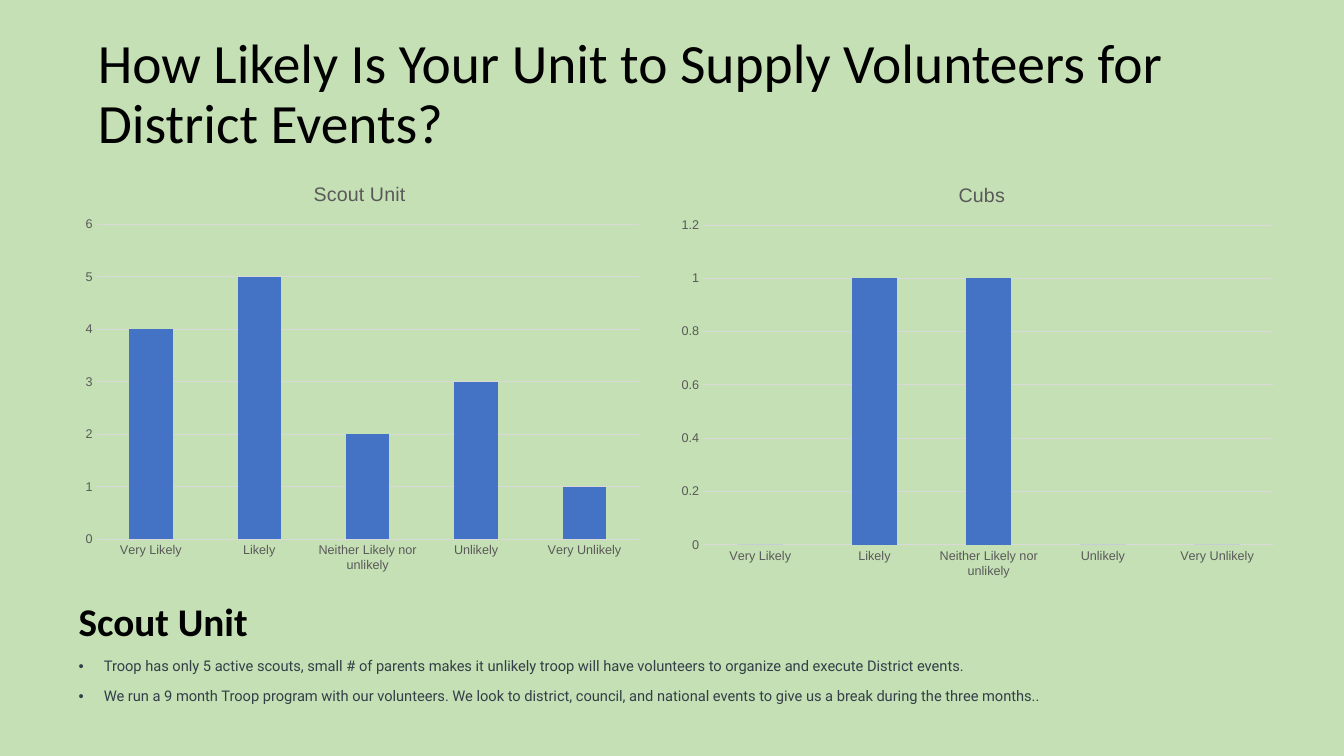
from lxml.etree import SubElement
from pptx import Presentation
from pptx.chart.data import CategoryChartData
from pptx.dml.color import RGBColor
from pptx.enum.chart import XL_CHART_TYPE, XL_TICK_MARK
from pptx.enum.text import MSO_ANCHOR, MSO_AUTO_SIZE, PP_ALIGN
from pptx.oxml.ns import qn
from pptx.util import Inches, Pt

COLORS = {"background": "C5E0B4", "text": "000000", "comment": "333E48",
          "bar": "4472C4", "label": "595959", "grid": "D9D9D9"}
ANSWERS = ["Very Likely", "Likely", "Neither Likely nor unlikely",
           "Unlikely", "Very Unlikely"]
COMMENTS = [
    "Troop has only 5 active scouts, small # of parents makes it unlikely "
    "troop will have volunteers to organize and execute District events.",
    "We run a 9 month Troop program with our volunteers. We look to district, "
    "council, and national events to give us a break during the three months..",
]


def rgb(name):
    """Return the palette colour with this name."""
    return RGBColor.from_string(COLORS[name])


def set_font(font, name, size, color, bold=False):
    """Format a font."""
    font.name, font.size, font.bold = name, Pt(size), bold
    font.color.rgb = rgb(color)


def place(sp, box, anchor):
    """Move a placeholder to a box and return its text frame."""
    sp.left, sp.top, sp.width, sp.height = (Inches(v) for v in box)
    tf = sp.text_frame
    tf.word_wrap = True
    tf.auto_size = MSO_AUTO_SIZE.NONE
    tf.vertical_anchor = anchor
    tf.margin_left = tf.margin_right = Inches(0.05)
    tf.margin_top = tf.margin_bottom = Inches(0.05)
    return tf


def set_bullet(p, char=None):
    """Give a paragraph a hanging bullet, or none."""
    pPr = p._p.get_or_add_pPr()
    indent = Inches(0.25) if char else 0
    pPr.set("marL", str(indent))
    pPr.set("indent", str(-indent))
    if char:
        SubElement(pPr, qn("a:buFont"), typeface="Arial")
        SubElement(pPr, qn("a:buChar"), char=char)
    else:
        SubElement(pPr, qn("a:buNone"))


def add_title(sp, box, text):
    """Fill the title placeholder."""
    tf = place(sp, box, MSO_ANCHOR.MIDDLE)
    tf.text = text
    p = tf.paragraphs[0]
    p.alignment = PP_ALIGN.LEFT
    p.line_spacing = 0.9
    set_font(p.runs[0].font, "Calibri", 39.6, "text")


def add_comments(sp, box, heading, comments):
    """Fill the body placeholder with a heading and bulleted comments."""
    tf = place(sp, box, MSO_ANCHOR.TOP)
    tf.text = "\n".join([heading] + comments)
    for i, p in enumerate(tf.paragraphs):
        set_bullet(p, "•" if i else None)
        p.alignment = PP_ALIGN.LEFT
        p.line_spacing = 0.9
        p.space_before = Pt(10 if i else 0)
        p.space_after = Pt(0)
        if i:
            set_font(p.runs[0].font, "Roboto", 10.5, "comment")
        else:
            set_font(p.runs[0].font, "Calibri", 28, "text", True)


def set_layout(parent, index, **values):
    """Position a chart part by fractions of the chart."""
    for old in parent.findall(qn("c:layout")):
        parent.remove(old)
    layout = SubElement(parent, qn("c:layout"))
    parent.insert(index, layout)
    manual = SubElement(layout, qn("c:manualLayout"))
    if "w" in values:
        SubElement(manual, qn("c:layoutTarget"), val="inner")
    for mode in ("xMode", "yMode"):
        SubElement(manual, qn("c:" + mode), val="edge")
    for key, value in values.items():
        SubElement(manual, qn("c:" + key), val=str(value))


def add_answer_chart(slide, box, title, values, top, step, title_x, plot_x, plot_w):
    """Add a column chart of the answers from one group."""
    data = CategoryChartData()
    data.categories = ANSWERS
    data.add_series("Series 1", values)
    chart = slide.shapes.add_chart(XL_CHART_TYPE.COLUMN_CLUSTERED,
                                   *(Inches(v) for v in box), data).chart
    set_font(chart.font, "Arial", 10, "text")
    chart.has_legend = False
    chart.has_title = True
    chart.chart_title.include_in_layout = False
    p = chart.chart_title.text_frame.paragraphs[0]
    p.text = title
    set_font(p.runs[0].font, "Arial", 14, "label")

    for axis in (chart.category_axis, chart.value_axis):
        axis.major_tick_mark = axis.minor_tick_mark = XL_TICK_MARK.NONE
        axis.format.line.fill.background()
        set_font(axis.tick_labels.font, "Arial", 9, "label")
    axis = chart.value_axis
    axis.minimum_scale, axis.maximum_scale, axis.major_unit = 0, top, step
    axis.tick_labels.number_format = "General"
    axis.tick_labels.number_format_is_linked = False
    grid = axis.major_gridlines.format.line
    grid.color.rgb = rgb("grid")
    grid.width = Pt(0.75)

    plot = chart.plots[0]
    plot.gap_width = 150
    plot.vary_by_categories = False
    fill = plot.series[0].format.fill
    fill.solid()
    fill.fore_color.rgb = rgb("bar")

    c = chart.element.find(qn("c:chart"))
    set_layout(c.find(qn("c:title")), 1, x=title_x, y=0.04)
    set_layout(c.find(qn("c:plotArea")), 0, x=plot_x, y=0.15, w=plot_w, h=0.75)


def add_survey_slide(prs):
    """Add the slide on volunteers for district events."""
    s = prs.slides.add_slide(prs.slide_layouts[1])
    s.background.fill.solid()
    s.background.fill.fore_color.rgb = rgb("background")
    add_title(s.shapes.title, (0.92, 0.4, 11.5, 1.1),
              "How Likely Is Your Unit to Supply Volunteers for District Events?")
    add_comments(s.placeholders[1], (0.73, 5.93, 11.5, 1.17), "Scout Unit", COMMENTS)
    add_answer_chart(s, (6.67, 1.6, 6.09, 4.23), "Cubs", (0, 1, 1, 0, 0),
                     1.2, 0.2, 0.46, 0.05, 0.93)
    add_answer_chart(s, (0.73, 1.6, 5.72, 4.17), "Scout Unit", (4, 5, 2, 3, 1),
                     6, 1, 0.41, 0.04, 0.94)


def main():
    """Build and save the presentation."""
    prs = Presentation()
    prs.slide_width, prs.slide_height = Inches(13.33), Inches(7.5)
    add_survey_slide(prs)
    prs.save("out.pptx")


if __name__ == "__main__":
    main()
